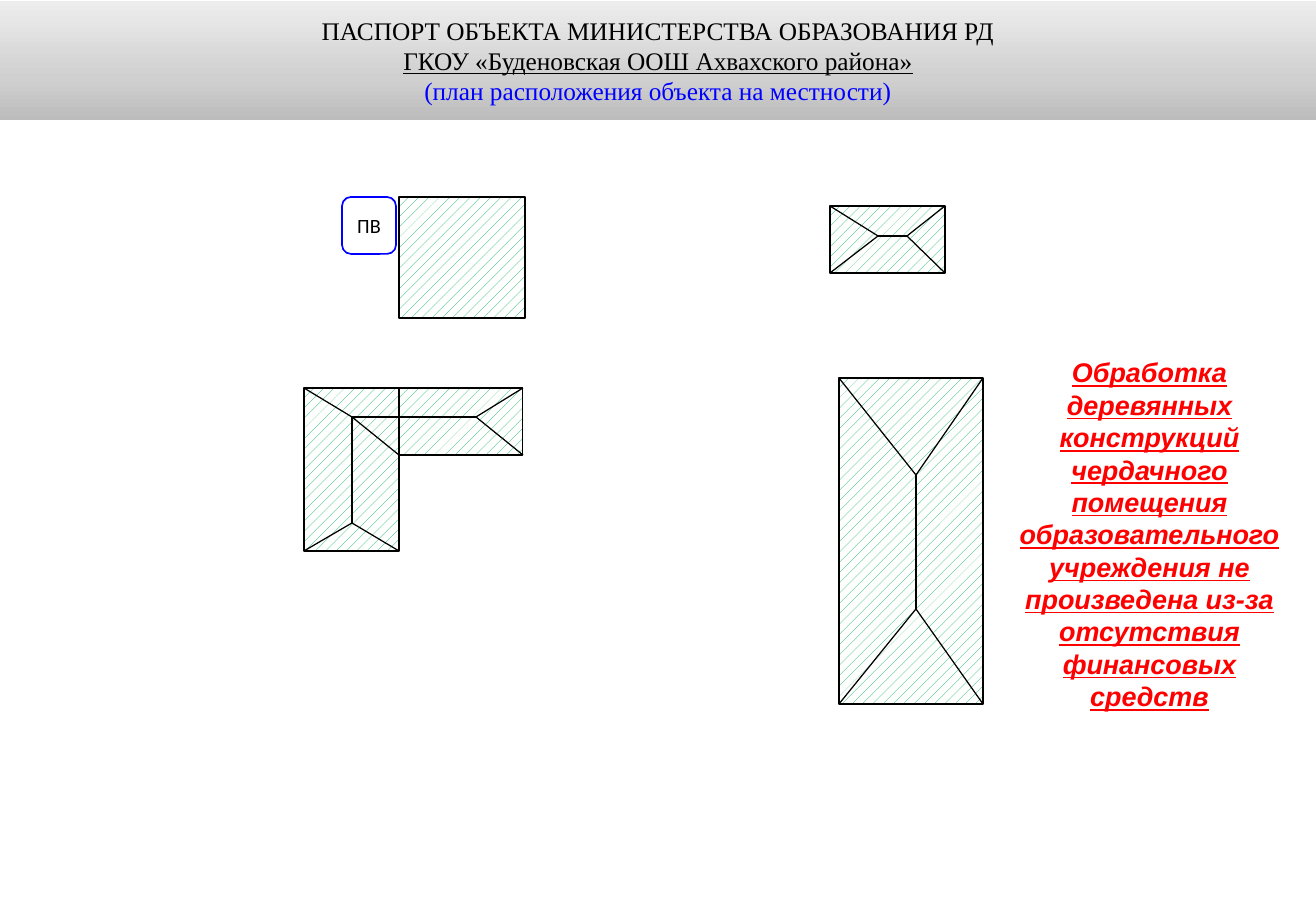
from copy import deepcopy

from lxml import etree
from pptx import Presentation
from pptx.dml.color import RGBColor
from pptx.enum.dml import MSO_PATTERN
from pptx.enum.shapes import MSO_CONNECTOR, MSO_SHAPE
from pptx.enum.text import MSO_ANCHOR, MSO_AUTO_SIZE, PP_ALIGN
from pptx.oxml.ns import qn
from pptx.util import Pt

EMU_PER_PX = 7526
SLIDE_SIZE = (1316, 911)

RECT = MSO_SHAPE.RECTANGLE
ROUNDED = MSO_SHAPE.ROUNDED_RECTANGLE
STRAIGHT = MSO_CONNECTOR.STRAIGHT
HATCH = MSO_PATTERN.DASHED_UPWARD_DIAGONAL
MIDDLE = MSO_ANCHOR.MIDDLE
FIT_SHAPE = MSO_AUTO_SIZE.SHAPE_TO_FIT_TEXT
CENTER = PP_ALIGN.CENTER

BLACK = RGBColor(0x00, 0x00, 0x00)
WHITE = RGBColor(0xFF, 0xFF, 0xFF)
BLUE = RGBColor(0x00, 0x00, 0xFF)
RED = RGBColor(0xFF, 0x00, 0x00)
GREEN = RGBColor(0x00, 0xB0, 0x50)
BANNER_STOPS = [
    (0, RGBColor(0xBC, 0xBC, 0xBC)),
    (0.35, RGBColor(0xD0, 0xD0, 0xD0)),
    (1, RGBColor(0xED, 0xED, 0xED)),
]

TITLE_FONT = {"name": "Times New Roman", "size": Pt(15)}
HYDRANT_FONT = {"name": "Calibri", "size": Pt(12)}
NOTICE_FONT = {"name": "Arial", "size": Pt(16), "bold": True,
               "italic": True, "underline": True}

TITLE_LINES = [
    ("ПАСПОРТ ОБЪЕКТА МИНИСТЕРСТВА ОБРАЗОВАНИЯ РД", BLACK, False),
    ("ГКОУ «Буденовская ООШ Ахвахского района»", BLACK, True),
    ("(план расположения объекта на местности)", BLUE, False),
]
NOTICE = ("Обработка деревянных конструкций чердачного помещения "
          "образовательного учреждения не произведена из-за отсутствия "
          "финансовых средств")

# Buildings: left, top, width, height
MAIN_BUILDING = (839, 378, 144, 326)
WEST_WING = (304, 388, 95, 163)
NORTH_WING = (399, 388, 124, 67)
SQUARE_BUILDING = (399, 197, 126, 121)
SMALL_BUILDING = (830, 206, 115, 67)


def corners(box):
    """Top left, top right, bottom left and bottom right points."""
    left, top, width, height = box
    return [(x, y) for y in (top, top + height) for x in (left, left + width)]


class SitePlan:
    def __init__(self, slide):
        self.slide = slide

    def px(self, values):
        return [value * EMU_PER_PX for value in values]

    def add_lines(self, frame, lines, font_format):
        """Fill a text frame with centred (text, colour, underline) lines."""
        frame.word_wrap = True
        for number, (text, color, underline) in enumerate(lines):
            paragraph = frame.add_paragraph() if number else frame.paragraphs[0]
            paragraph.alignment = CENTER
            run = paragraph.add_run()
            run.text = text
            for key, value in {**font_format, "underline": underline}.items():
                setattr(run.font, key, value)
            run.font.color.rgb = color

    def shape(self, kind, box):
        shape = self.slide.shapes.add_shape(kind, *self.px(box))
        shape.shadow.inherit = False
        return shape

    def banner(self, box, lines):
        banner = self.shape(RECT, box)
        banner.line.fill.background()
        banner.fill.gradient()
        banner.fill.gradient_angle = 90
        stop_list = banner._element.spPr.find(qn("a:gradFill")).find(qn("a:gsLst"))
        stop_list.append(deepcopy(stop_list[-1]))
        for stop, (position, color) in zip(banner.fill.gradient_stops, BANNER_STOPS):
            stop.position = position
            stop.color.rgb = color
        banner.text_frame.vertical_anchor = MIDDLE
        self.add_lines(banner.text_frame, lines, TITLE_FONT)

    def building(self, box):
        building = self.shape(RECT, box)
        building.fill.patterned()
        building.fill.pattern = HATCH
        building.fill.fore_color.rgb = GREEN
        building.fill.back_color.rgb = WHITE
        building.line.color.rgb = BLACK
        building.line.width = Pt(0)

    def roof_edge(self, start, end):
        edge = self.slide.shapes.add_connector(STRAIGHT, *self.px(start + end))
        edge.line.color.rgb = BLACK
        edge.line.width = Pt(0.75)
        etree.SubElement(edge._element.spPr, qn("a:effectLst"))

    def roof(self, ridge_start, ridge_end, start_corners, end_corners):
        """Ridge with hips running from each end to its corners."""
        self.roof_edge(ridge_start, ridge_end)
        for peak, feet in ((ridge_start, start_corners), (ridge_end, end_corners)):
            for foot in feet:
                self.roof_edge(peak, foot)

    def hydrant(self, box, text):
        hydrant = self.shape(ROUNDED, box)
        hydrant.fill.solid()
        hydrant.fill.fore_color.rgb = WHITE
        hydrant.line.color.rgb = BLUE
        hydrant.line.width = Pt(1)
        frame = hydrant.text_frame
        frame_format = {"margin_left": 0, "margin_right": 0,
                        "vertical_anchor": MIDDLE}
        for key, value in frame_format.items():
            setattr(frame, key, value)
        self.add_lines(frame, [(text, BLACK, False)], HYDRANT_FONT)

    def notice(self, box, text):
        notice = self.slide.shapes.add_textbox(*self.px(box))
        notice.text_frame.auto_size = FIT_SHAPE
        self.add_lines(notice.text_frame, [(text, RED, True)], NOTICE_FONT)


def main():
    deck = Presentation()
    deck.slide_width, deck.slide_height = [side * EMU_PER_PX for side in SLIDE_SIZE]
    plan = SitePlan(deck.slides.add_slide(deck.slide_layouts[6]))

    # Title banner
    plan.banner((0, 1, 1316, 119), TITLE_LINES)

    # Buildings
    for box in (MAIN_BUILDING, WEST_WING, NORTH_WING, SQUARE_BUILDING,
                SMALL_BUILDING):
        plan.building(box)

    # Roof of the main building
    main_corners = corners(MAIN_BUILDING)
    plan.roof((916, 475), (916, 609), main_corners[:2], main_corners[2:])

    # Roof of the small building
    small_corners = corners(SMALL_BUILDING)
    plan.roof((878, 236), (907, 236), small_corners[::2], small_corners[1::2])

    # Roof of the L-shaped building, its two ridges meeting at the bend
    bend = (352, 417)
    west_corners = corners(WEST_WING)
    north_corners = corners(NORTH_WING)
    plan.roof(bend, (352, 523), [west_corners[0], north_corners[2]],
              west_corners[2:])
    plan.roof(bend, (476, 417), [], north_corners[1::2])

    # Hydrant mark and notice
    plan.hydrant((342, 197, 54, 57), "ПВ")
    plan.notice((1002, 350, 295, 369), NOTICE)

    deck.save("out.pptx")


if __name__ == "__main__":
    main()
